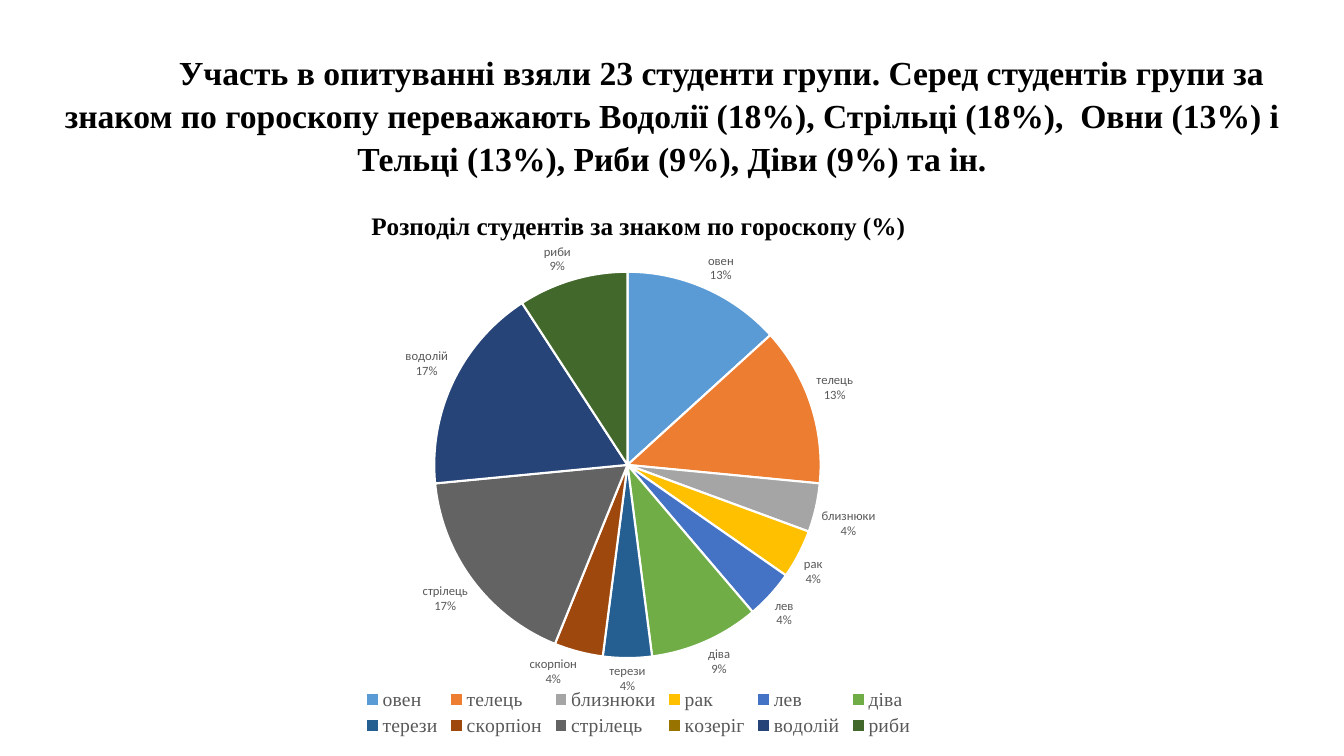
from lxml.etree import SubElement
from pptx import Presentation
from pptx.chart.data import CategoryChartData
from pptx.dml.color import RGBColor
from pptx.enum.chart import XL_CHART_TYPE, XL_LABEL_POSITION, XL_LEGEND_POSITION
from pptx.enum.text import MSO_ANCHOR, PP_ALIGN
from pptx.oxml.ns import qn
from pptx.util import Inches, Pt

WIDTH, HEIGHT = Inches(13.33), Inches(7.5)
COLORS = {"text": "000000", "muted": "595959", "edge": "FFFFFF"}
SERIF, SANS = "Times New Roman", "Calibri"
HEADING = ("Участь в опитуванні взяли 23 студенти групи. Серед студентів групи за "
           "знаком по гороскопу переважають Водолії (18%), Стрільці (18%),  "
           "Овни (13%) і Тельці (13%), Риби (9%), Діви (9%) та ін.")
CHART_TITLE = "Розподіл студентів за знаком по гороскопу (%)"
SIGNS = [  # sign, share, slice colour
    ("овен", 13, "5B9BD5"), ("телець", 13, "ED7D31"), ("близнюки", 4, "A5A5A5"),
    ("рак", 4, "FFC000"), ("лев", 4, "4472C4"), ("діва", 9, "70AD47"),
    ("терези", 4, "255E91"), ("скорпіон", 4, "9E480E"), ("стрілець", 17, "636363"),
    ("козеріг", 0, "997300"), ("водолій", 17, "264478"), ("риби", 9, "43682B"),
]


def set_attrs(target, **values):
    for name, value in values.items():
        setattr(target, name, value)


def set_font(font, name, size, color, bold=False):
    set_attrs(font, name=name, size=Pt(size), bold=bold)
    font.color.rgb = RGBColor.from_string(COLORS[color])


def share_box(left, top, width, height):
    """Turn shares of the slide into lengths."""
    return (int(WIDTH * left), int(HEIGHT * top),
            int(WIDTH * width), int(HEIGHT * height))


def add_heading(s, box, text):
    tf = s.shapes.add_textbox(*box).text_frame
    set_attrs(tf, word_wrap=True, vertical_anchor=MSO_ANCHOR.MIDDLE)
    p = tf.paragraphs[0]
    set_attrs(p, alignment=PP_ALIGN.CENTER, line_spacing=1.07)
    p._p.get_or_add_pPr().set("indent", str(Inches(0.98)))
    r = p.add_run()
    r.text = text
    set_font(r.font, SERIF, 24, "text", True)


def place_plot(chart, **shares):
    """Fix the inner plot area as shares of the chart."""
    area = chart._chartSpace.chart.plotArea
    for old in area.findall(qn("c:layout")):
        area.remove(old)
    layout = SubElement(area, qn("c:layout"))
    area.insert(0, layout)
    manual = SubElement(layout, qn("c:manualLayout"))
    settings = {"layoutTarget": "inner", "xMode": "edge", "yMode": "edge", **shares}
    for tag, value in settings.items():
        SubElement(manual, qn(f"c:{tag}")).set("val", str(value))


def hide_label(labels, index):
    label = labels._element.makeelement(qn("c:dLbl"))
    SubElement(label, qn("c:idx")).set("val", str(index))
    SubElement(label, qn("c:delete")).set("val", "1")
    labels._element.insert(0, label)


def add_pie(s, box, title, rows):
    data = CategoryChartData()
    data.categories = [sign for sign, _, _ in rows]
    data.add_series("Series 1", [share for _, share, _ in rows])
    chart = s.shapes.add_chart(XL_CHART_TYPE.PIE, *box, data).chart
    set_font(chart.font, SANS, 10, "text")

    chart.has_title = True
    tf = chart.chart_title.text_frame
    tf.text = title
    set_font(tf.paragraphs[0].runs[0].font, SERIF, 18, "text", True)

    chart.has_legend = True
    set_attrs(chart.legend, position=XL_LEGEND_POSITION.BOTTOM, include_in_layout=False)
    set_font(chart.legend.font, SERIF, 14, "muted")
    place_plot(chart, x=0.07, y=0.15, w=0.84, h=0.7)

    plot = chart.plots[0]
    plot.vary_by_categories = True
    series = plot.series[0]
    labels = series.data_labels
    set_attrs(labels, show_percentage=True, show_category_name=True, show_value=False,
              position=XL_LABEL_POSITION.OUTSIDE_END)
    set_font(labels.font, SANS, 9, "muted")
    for i, (_, share, color) in enumerate(rows):
        fmt = series.points[i].format
        fmt.fill.solid()
        fmt.fill.fore_color.rgb = RGBColor.from_string(color)
        fmt.line.color.rgb = RGBColor.from_string(COLORS["edge"])
        fmt.line.width = Pt(1.5)
        if not share:
            hide_label(labels, i)


def main():
    prs = Presentation()
    set_attrs(prs, slide_width=WIDTH, slide_height=HEIGHT)
    s = prs.slides.add_slide(prs.slide_layouts[6])
    add_heading(s, share_box(0.03, 0.05, 0.94, 0.2), HEADING)
    add_pie(s, share_box(0.07, 0.25, 0.81, 0.73), CHART_TITLE, SIGNS)
    prs.save("out.pptx")


if __name__ == "__main__":
    main()
